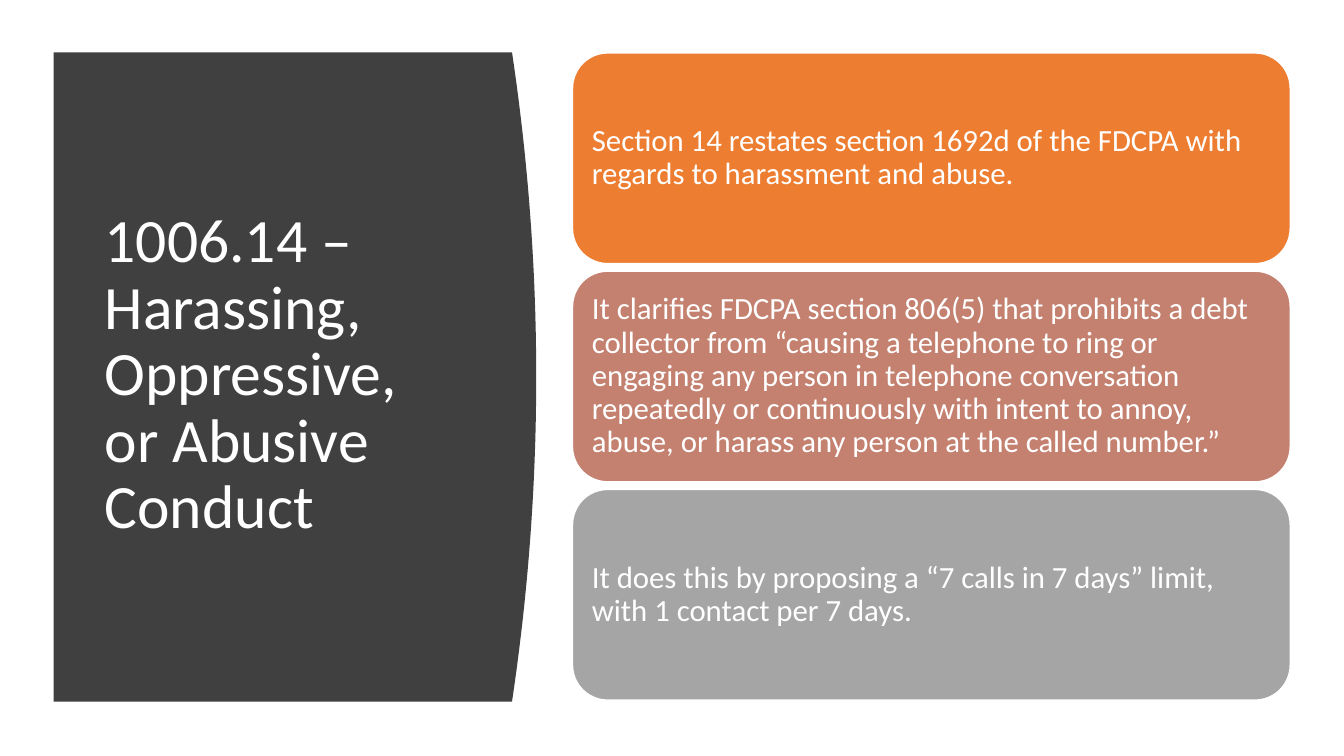
import pptx
import pptx.dml.color
import pptx.enum.shapes
import pptx.enum.text
import pptx.util

WHITE = pptx.dml.color.RGBColor(0xFF, 0xFF, 0xFF)
CHARCOAL = pptx.dml.color.RGBColor(0x40, 0x40, 0x40)
ORANGE = pptx.dml.color.RGBColor(0xED, 0x7D, 0x31)
ROSE = pptx.dml.color.RGBColor(0xC4, 0x81, 0x70)
GRAY = pptx.dml.color.RGBColor(0xA5, 0xA5, 0xA5)

HEADING = "1006.14 – Harassing, Oppressive, or Abusive Conduct"
POINTS = [
    ("Section 14 restates section 1692d of the FDCPA with regards to "
     "harassment and abuse.", ORANGE),
    ("It clarifies FDCPA section 806(5) that prohibits a debt collector from "
     "“causing a telephone to ring or engaging any person in telephone "
     "conversation repeatedly or continuously with intent to annoy, abuse, or "
     "harass any person at the called number.”", ROSE),
    ("It does this by proposing a “7 calls in 7 days” limit, with 1 contact "
     "per 7 days.", GRAY),
]


class SlideBuilder:
    font = "Calibri"
    line_spacing = 0.9
    grid = 100
    curve_steps = 40

    def __init__(self, deck):
        self.column = deck.slide_width / self.grid
        self.row = deck.slide_height / self.grid
        self.shapes = deck.slides.add_slide(deck.slide_layouts[6]).shapes

    def place(self, columns, rows):
        return round(columns * self.column), round(rows * self.row)

    def set_words(self, shape, words, size, inset):
        frame = shape.text_frame
        frame.text = words
        frame.word_wrap = True
        frame.vertical_anchor = pptx.enum.text.MSO_ANCHOR.MIDDLE
        frame.margin_left = frame.margin_right = pptx.util.Inches(inset)
        paragraph = frame.paragraphs[0]
        paragraph.alignment = pptx.enum.text.PP_ALIGN.LEFT
        paragraph.line_spacing = self.line_spacing
        font = paragraph.runs[0].font
        font.name = self.font
        font.size = pptx.util.Pt(size)
        font.color.rgb = WHITE

    def curved_panel(self, left, top, right, height, bulge, color):
        edge = []
        for step in range(self.curve_steps + 1):
            share = step / self.curve_steps
            offset = bulge * 4 * share * (1 - share)
            edge.append(self.place(right + offset, top + height * share))
        builder = self.shapes.build_freeform(*self.place(left, top))
        builder.add_line_segments(edge + [self.place(left, top + height)])
        panel = builder.convert_to_shape()
        panel.shadow.inherit = False
        panel.fill.solid()
        panel.fill.fore_color.rgb = color
        panel.line.fill.background()

    def heading(self, words, left, top, width, height):
        box = self.shapes.add_textbox(
            *self.place(left, top), *self.place(width, height))
        self.set_words(box, words, 44, 0.1)

    def card(self, words, color, left, top, width, height):
        card = self.shapes.add_shape(
            pptx.enum.shapes.MSO_SHAPE.ROUNDED_RECTANGLE,
            *self.place(left, top), *self.place(width, height))
        card.shadow.inherit = False
        card.fill.solid()
        card.fill.fore_color.rgb = color
        card.line.color.rgb = WHITE
        card.line.width = pptx.util.Pt(1)
        self.set_words(card, words, 22, 0.09)


def main():
    deck = pptx.Presentation()
    deck.slide_width = pptx.util.Inches(13.33)
    deck.slide_height = pptx.util.Inches(7.5)
    slide = SlideBuilder(deck)

    slide.curved_panel(4, 6.93, 38.1, 85.87, 1.8, CHARCOAL)
    slide.heading(HEADING, 7.05, 14.8, 28.05, 69.87)
    card_height, gap = 27.87, 1
    for index, (words, color) in enumerate(POINTS):
        top = 7 + index * (card_height + gap)
        slide.card(words, color, 42.6, top, 53.4, card_height)

    deck.save("out.pptx")


if __name__ == "__main__":
    main()
